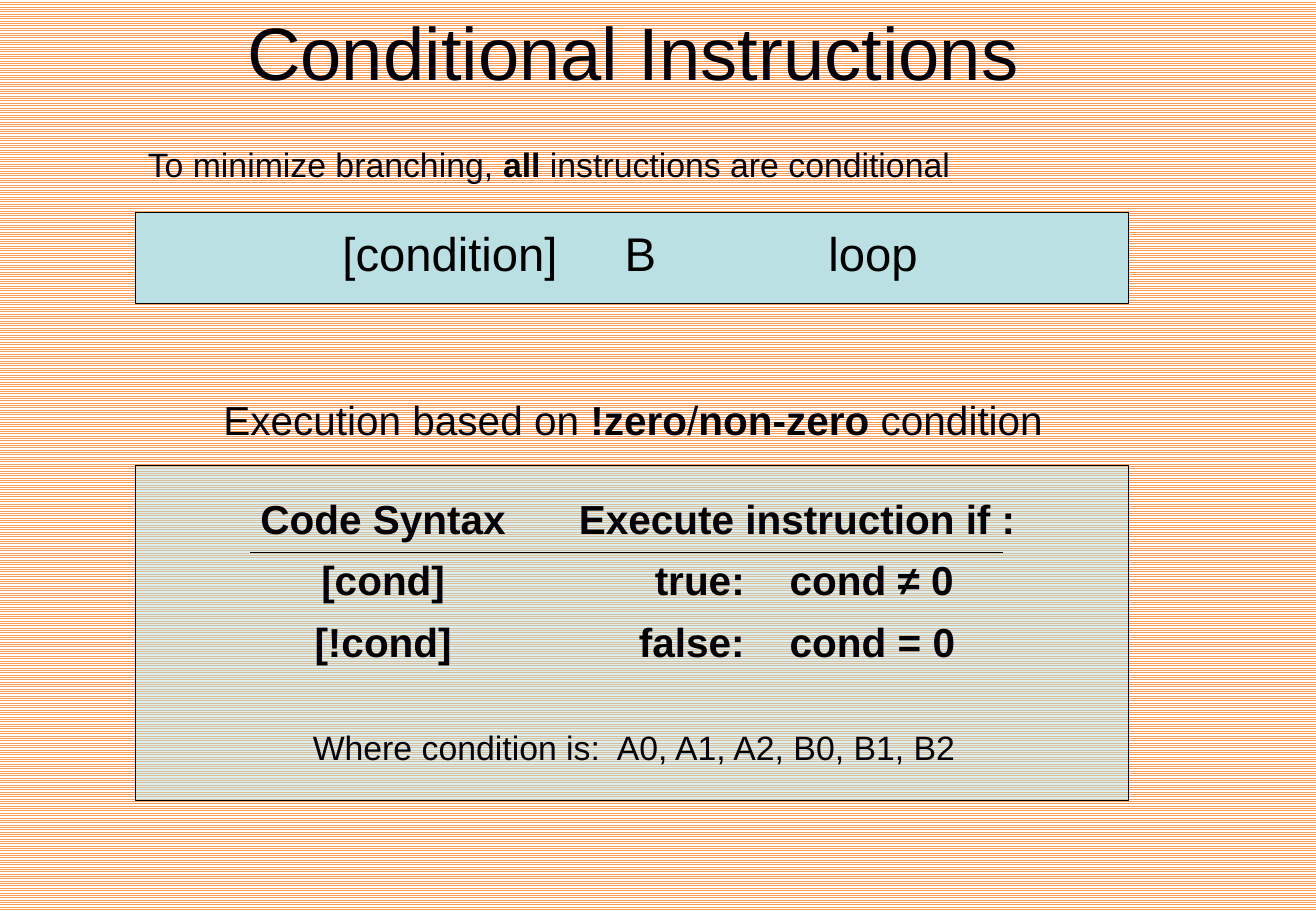
from dataclasses import dataclass

import lxml.etree
import pptx
import pptx.dml.color
import pptx.enum.dml
import pptx.enum.shapes
import pptx.enum.text
import pptx.oxml
import pptx.oxml.ns
import pptx.shapes.autoshape
import pptx.slide
import pptx.text.text
import pptx.util
from pptx.util import Cm

COLORS = {
    "text": "000000",
    "panel": "BBE0E3",
    "stripe": "F89E5A",
    "paper": "FFFFFF",
}
FONT = "Arial"
CENTER = pptx.enum.text.PP_ALIGN.CENTER
LEFT = pptx.enum.text.PP_ALIGN.LEFT
PANEL_LEFT, PANEL_WIDTH = 2.84, 20.75


@dataclass(frozen=True)
class Run:
    text: str
    bold: bool = False


@dataclass(frozen=True)
class Line:
    runs: tuple[Run, ...]
    alignment: pptx.enum.text.PP_ALIGN = CENTER
    tabs: tuple[tuple[float, str], ...] = ()


@dataclass(frozen=True)
class TextBlock:
    left: float
    top: float
    width: float
    height: float
    size: int
    lines: tuple[Line, ...]
    line_spacing: float = 0.8
    wrap: bool = True


@dataclass(frozen=True)
class Panel:
    top: float
    height: float
    opacity: int = 100


CONDITION_TABS = ((4.14, "r"),)
CODE_PANEL = Panel(4.45, 1.9)
SYNTAX_PANEL = Panel(9.73, 7.01, opacity=50)
CODE_INDENT = 4.32
CODE_LINE = Line((Run("[condition]\tB\tloop"),), LEFT, ((5.9, "l"), (10.16, "l")))

TEXT_BLOCKS = (
    TextBlock(6.25, 15.24, 14.02, 0.94, 20,
              (Line((Run("Where condition is:  A0, A1, A2, B0, B1, B2"),)),),
              wrap=False),
    TextBlock(4.29, 10.41, 7.44, 3.71, 24,
              tuple(Line((Run(text, True),))
                    for text in ("Code Syntax", "[cond]", "[!cond]"))),
    TextBlock(11.18, 10.41, 10.97, 3.71, 24,
              (Line((Run("Execute instruction if :", True),)),
               Line((Run("\ttrue:\tcond ≠ 0", True),), LEFT, CONDITION_TABS),
               Line((Run("\tfalse:\tcond = 0", True),), LEFT, CONDITION_TABS))),
    TextBlock(2.01, 8.26, 22.45, 1.17, 24,
              (Line((Run("Execution based on "), Run("!zero", True), Run("/"),
                     Run("non-zero", True), Run(" condition"))),),
              line_spacing=0.9),
    TextBlock(PANEL_LEFT, 2.97, PANEL_WIDTH, 1.02, 20,
              (Line((Run("To minimize branching, "), Run("all", True),
                     Run(" instructions are conditional")), LEFT),),
              line_spacing=0.9),
)


def rgb(name: str) -> pptx.dml.color.RGBColor:
    return pptx.dml.color.RGBColor.from_string(COLORS[name])


def set_font(paragraph: pptx.text.text._Paragraph, size: int) -> None:
    paragraph.font.name = FONT
    paragraph.font.size = pptx.util.Pt(size)
    paragraph.font.color.rgb = rgb("text")


def write_line(paragraph: pptx.text.text._Paragraph, line: Line, size: int,
               line_spacing: float) -> None:
    if line.tabs:
        properties = paragraph._p.get_or_add_pPr()
        tab_list = lxml.etree.SubElement(properties, pptx.oxml.ns.qn("a:tabLst"))
        for position, alignment in line.tabs:
            lxml.etree.SubElement(tab_list, pptx.oxml.ns.qn("a:tab"),
                                  pos=str(int(Cm(position))), algn=alignment)
    paragraph.alignment = line.alignment
    paragraph.line_spacing = line_spacing
    set_font(paragraph, size)
    uniform = len({run.bold for run in line.runs}) == 1
    if uniform:
        paragraph.font.bold = line.runs[0].bold
    for part in line.runs:
        run = paragraph.add_run()
        run.text = part.text
        if not uniform:
            run.font.bold = part.bold


def add_text_block(slide: pptx.slide.Slide, block: TextBlock) -> None:
    shape = slide.shapes.add_textbox(
        Cm(block.left), Cm(block.top), Cm(block.width), Cm(block.height))
    frame = shape.text_frame
    frame.word_wrap = block.wrap
    for index, line in enumerate(block.lines):
        paragraph = frame.add_paragraph() if index else frame.paragraphs[0]
        write_line(paragraph, line, block.size, block.line_spacing)
        if index:
            paragraph.space_before = pptx.util.Pt(block.size * 0.55)


def add_panel(slide: pptx.slide.Slide, panel: Panel) -> pptx.shapes.autoshape.Shape:
    shape = slide.shapes.add_shape(
        pptx.enum.shapes.MSO_SHAPE.RECTANGLE,
        Cm(PANEL_LEFT), Cm(panel.top), Cm(PANEL_WIDTH), Cm(panel.height))
    shape.shadow.inherit = False
    shape.fill.solid()
    shape.fill.fore_color.rgb = rgb("panel")
    if panel.opacity < 100:
        color = shape._element.spPr.find(".//" + pptx.oxml.ns.qn("a:srgbClr"))
        lxml.etree.SubElement(color, pptx.oxml.ns.qn("a:alpha"),
                              val=str(panel.opacity * 1000))
    shape.line.color.rgb = rgb("text")
    shape.line.width = pptx.util.Pt(0.75)
    return shape


def add_code_panel(slide: pptx.slide.Slide) -> None:
    frame = add_panel(slide, CODE_PANEL).text_frame
    frame.word_wrap = True
    frame.vertical_anchor = pptx.enum.text.MSO_ANCHOR.MIDDLE
    frame.margin_left = Cm(CODE_INDENT)
    frame.margin_top = frame.margin_right = frame.margin_bottom = Cm(0.64)
    write_line(frame.paragraphs[0], CODE_LINE, 28, 0.8)


def add_header_rule(slide: pptx.slide.Slide) -> None:
    connector = slide.shapes.add_connector(
        pptx.enum.shapes.MSO_CONNECTOR.STRAIGHT,
        Cm(5.23), Cm(11.56), Cm(20.96), Cm(11.56))
    connector.line.color.rgb = rgb("text")
    connector.line.width = pptx.util.Pt(0.75)
    lxml.etree.SubElement(connector._element.spPr, pptx.oxml.ns.qn("a:effectLst"))


def format_title(slide: pptx.slide.Slide) -> None:
    title = slide.shapes.title
    title.left, title.top, title.width, title.height = (
        Cm(0.64), Cm(0), Cm(25.2), Cm(2.11))
    frame = title.text_frame
    frame.text = "Conditional Instructions"
    frame.vertical_anchor = pptx.enum.text.MSO_ANCHOR.MIDDLE
    frame.margin_left = frame.margin_right = Cm(0.13)
    frame.paragraphs[0].alignment = CENTER
    set_font(frame.paragraphs[0], 44)


def stripe_background(slide: pptx.slide.Slide) -> None:
    fill = slide.background.fill
    fill.patterned()
    fill.pattern = pptx.enum.dml.MSO_PATTERN.LIGHT_HORIZONTAL
    fill.fore_color.rgb = rgb("stripe")
    fill.back_color.rgb = rgb("paper")


def main() -> None:
    presentation = pptx.Presentation()
    presentation.slide_width, presentation.slide_height = Cm(27.51), Cm(19.05)
    slide = presentation.slides.add_slide(presentation.slide_layouts[5])
    stripe_background(slide)
    format_title(slide)
    add_panel(slide, SYNTAX_PANEL)
    for block in TEXT_BLOCKS:
        add_text_block(slide, block)
    add_header_rule(slide)
    add_code_panel(slide)
    presentation.save("out.pptx")


if __name__ == "__main__":
    main()
